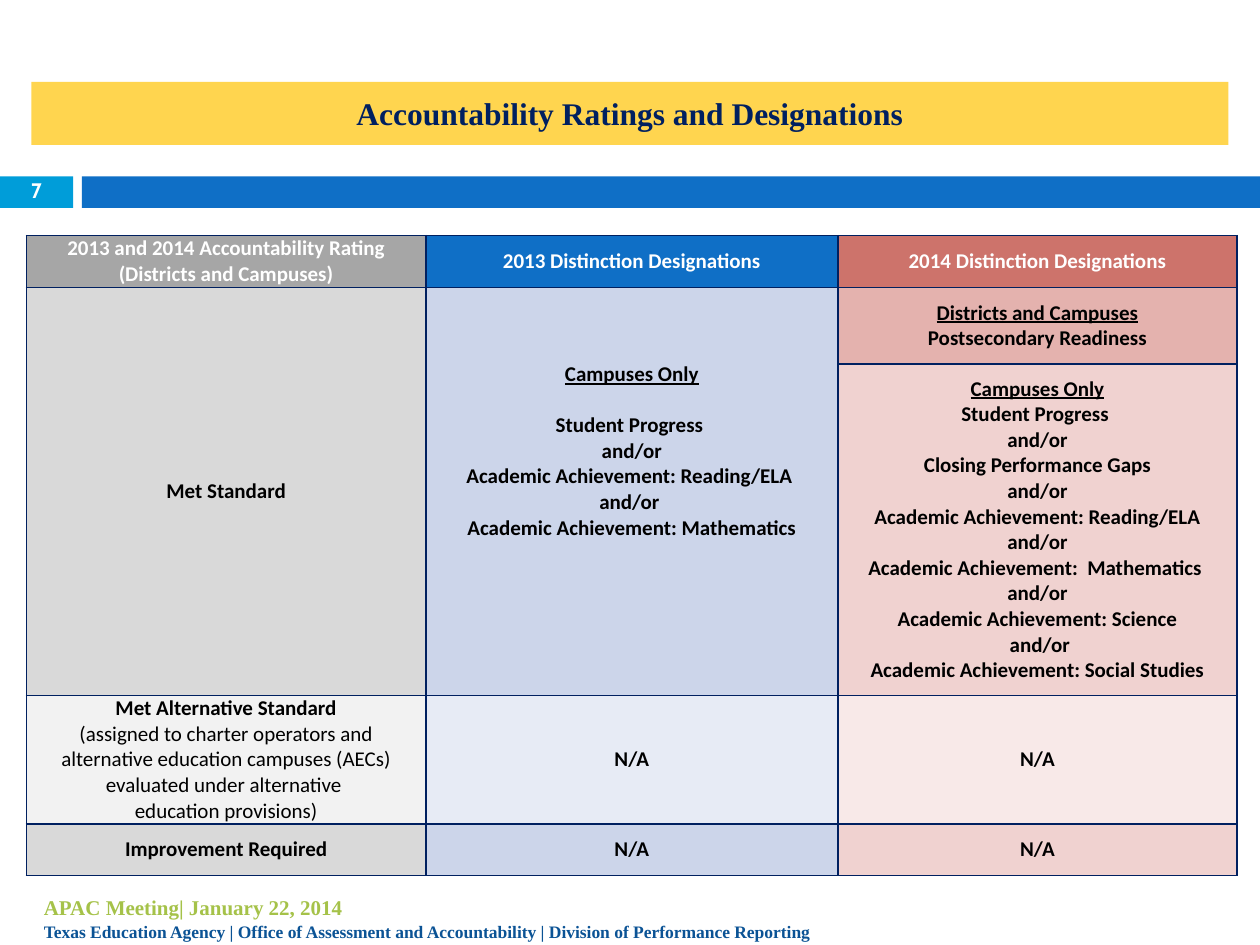
import dataclasses

import lxml.etree
import pptx
import pptx.dml.color
import pptx.enum.shapes
import pptx.enum.text
import pptx.oxml.ns
import pptx.util

Inches = pptx.util.Inches
Pt = pptx.util.Pt
Anchor = pptx.enum.text.MSO_ANCHOR
Align = pptx.enum.text.PP_ALIGN
qn = pptx.oxml.ns.qn


@dataclasses.dataclass(frozen=True)
class Theme:
    navy: str = "002060"
    yellow: str = "FFD54F"
    cyan: str = "009DD9"
    blue: str = "0F6FC6"
    green: str = "A5C249"
    footer_blue: str = "0B5395"
    white: str = "FFFFFF"
    black: str = "000000"
    header_fills: tuple = ("A6A6A6", "0F6FC6", "CD736B")
    dark_fills: tuple = ("D9D9D9", "CCD5EA", "F0D2D0")
    light_fills: tuple = ("F2F2F2", "E7EBF5", "F8E9E8")
    emphasis_fill: str = "E4B2AE"
    serif: str = "Times New Roman"
    body: str = "Calibri"
    number: str = "Cabin"
    title_size: int = 18
    body_size: int = 12
    small_size: int = 10
    border: float = 1


THEME = Theme()
COLUMN_WIDTHS = (3.17, 3.27, 3.17)
ROW_HEIGHTS = (0.41, 0.61, 2.63, 1.02, 0.41)
HEADINGS = (
    ("2013 and 2014 Accountability Rating", "(Districts and Campuses)"),
    ("2013 Distinction Designations",),
    ("2014 Distinction Designations",),
)
DESIGNATIONS_2013 = (
    "Campuses Only", "Student Progress ", "and/or",
    "Academic Achievement: Reading/ELA ", "and/or ",
    "Academic Achievement: Mathematics",
)
DESIGNATIONS_2014 = (
    "Campuses Only", "Student Progress ", "and/or",
    "Closing Performance Gaps", "and/or",
    "Academic Achievement: Reading/ELA", "and/or",
    "Academic Achievement:  Mathematics ", "and/or",
    "Academic Achievement: Science", " and/or",
    "Academic Achievement: Social Studies",
)
ALTERNATIVE = (
    "Met Alternative Standard",
    "(assigned to charter operators and alternative education campuses (AECs) "
    "evaluated under alternative \veducation provisions)",
)


def rgb(value):
    return pptx.dml.color.RGBColor.from_string(value)


def apply(target, **values):
    for name, value in values.items():
        setattr(target, name, value)


def write(frame, lines, color, font, size, align=Align.CENTER, **paragraph_format):
    """Fill a text frame with bold lines, one paragraph each."""
    for index, line in enumerate(lines):
        paragraph = frame.paragraphs[0] if index == 0 else frame.add_paragraph()
        paragraph.text = line
        apply(paragraph, alignment=align, **paragraph_format)
        for run in paragraph.runs:
            apply(run.font, name=font, size=Pt(size), bold=True)
            run.font.color.rgb = rgb(color)
        for line_break in paragraph._p.findall(qn("a:br")):
            properties = lxml.etree.SubElement(line_break, qn("a:rPr"))
            properties.set("sz", str(size * 100))


def add_bar(slide, left, top, width, height, fill):
    shape = slide.shapes.add_shape(
        pptx.enum.shapes.MSO_SHAPE.RECTANGLE,
        Inches(left), Inches(top), Inches(width), Inches(height))
    shape.shadow.inherit = False
    shape.fill.solid()
    shape.fill.fore_color.rgb = rgb(fill)
    shape.line.fill.background()
    return shape


def add_text(slide, left, top, width, height, text, color, font, size, **paragraph_format):
    box = slide.shapes.add_textbox(Inches(left), Inches(top), Inches(width), Inches(height))
    box.text_frame.word_wrap = True
    write(box.text_frame, [text], color, font, size, **paragraph_format)
    return box


def add_title(slide, left, top, width, height):
    bar = add_bar(slide, left, top, width, height, THEME.yellow)
    bar.text_frame.vertical_anchor = Anchor.MIDDLE
    write(bar.text_frame, ["Accountability Ratings and Designations"],
          THEME.navy, THEME.serif, THEME.title_size)


def add_number_band(slide, left, top, width, height):
    number_width, gap = 0.58, 0.07
    offset = number_width + gap
    add_bar(slide, left, top, number_width, height, THEME.cyan)
    add_bar(slide, left + offset, top, width - offset, height, THEME.blue)
    number = add_text(slide, left, top - 0.01, number_width, height + 0.02, "7",
                      THEME.white, THEME.number, THEME.body_size, line_spacing=0.8)
    number.text_frame.vertical_anchor = Anchor.MIDDLE


def add_borders(cell):
    properties = cell._tc.get_or_add_tcPr()
    for side in ("L", "R", "T", "B"):
        line = lxml.etree.SubElement(properties, qn(f"a:ln{side}"), w=str(Pt(THEME.border)))
        fill = lxml.etree.SubElement(line, qn("a:solidFill"))
        lxml.etree.SubElement(fill, qn("a:srgbClr"), val=THEME.navy)


def fill_cell(cell, lines, fill, color=THEME.black):
    cell.fill.solid()
    cell.fill.fore_color.rgb = rgb(fill)
    write(cell.text_frame, lines, color, THEME.body, THEME.body_size)


def add_ratings_table(slide, left, top):
    frame = slide.shapes.add_table(
        len(ROW_HEIGHTS), len(COLUMN_WIDTHS), Inches(left), Inches(top),
        Inches(sum(COLUMN_WIDTHS)), Inches(sum(ROW_HEIGHTS)))
    table = frame.table
    apply(table, first_row=False, horz_banding=False)
    for column, width in zip(table.columns, COLUMN_WIDTHS):
        column.width = Inches(width)
    for row, height in zip(table.rows, ROW_HEIGHTS):
        row.height = Inches(height)
    for cell in table.iter_cells():
        apply(cell, margin_left=Inches(0.07), margin_right=Inches(0.07),
              margin_top=0, margin_bottom=0, vertical_anchor=Anchor.MIDDLE)
        add_borders(cell)
    for column in (0, 1):
        table.cell(1, column).merge(table.cell(2, column))

    for column, lines in enumerate(HEADINGS):
        fill_cell(table.cell(0, column), lines, THEME.header_fills[column], THEME.white)
    rating_rows = (
        (1, (["Met Standard"], DESIGNATIONS_2013), THEME.dark_fills),
        (3, (ALTERNATIVE, ["N/A"], ["N/A"]), THEME.light_fills),
        (4, (["Improvement Required"], ["N/A"], ["N/A"]), THEME.dark_fills),
    )
    for row, contents, fills in rating_rows:
        for column, (lines, fill) in enumerate(zip(contents, fills)):
            fill_cell(table.cell(row, column), lines, fill)
    fill_cell(table.cell(1, 2), ("Districts and Campuses", "Postsecondary Readiness"),
              THEME.emphasis_fill)
    fill_cell(table.cell(2, 2), DESIGNATIONS_2014, THEME.dark_fills[2])

    for row, column in ((1, 1), (1, 2), (2, 2)):
        table.cell(row, column).text_frame.paragraphs[0].runs[0].font.underline = True
    for run in table.cell(3, 0).text_frame.paragraphs[1].runs:
        run.font.bold = False
    campuses_2013 = table.cell(1, 1)
    apply(campuses_2013, vertical_anchor=Anchor.TOP, margin_top=Inches(0.59))
    campuses_2013.text_frame.paragraphs[0].space_after = Pt(14.6)


def add_footer(slide, left, top):
    add_text(slide, left, top, 4.03, 0.45, "APAC Meeting| January 22, 2014",
             THEME.green, THEME.serif, THEME.body_size,
             align=Align.LEFT, line_spacing=Pt(29))
    add_text(slide, left, top + 0.22, 9, 0.41,
             "Texas Education Agency | Office of Assessment and Accountability"
             " | Division of Performance Reporting",
             THEME.footer_blue, THEME.serif, THEME.small_size,
             align=Align.LEFT, line_spacing=Pt(26))


def main():
    presentation = pptx.Presentation()
    apply(presentation, slide_width=Inches(10), slide_height=Inches(7.5))
    slide = presentation.slides.add_slide(presentation.slide_layouts[6])
    add_number_band(slide, 0, 1.4, 10, 0.25)
    add_title(slide, 0.25, 0.65, 9.5, 0.5)
    add_ratings_table(slide, 0.21, 1.87)
    add_footer(slide, 0.25, 6.85)
    presentation.save("out.pptx")


if __name__ == "__main__":
    main()
